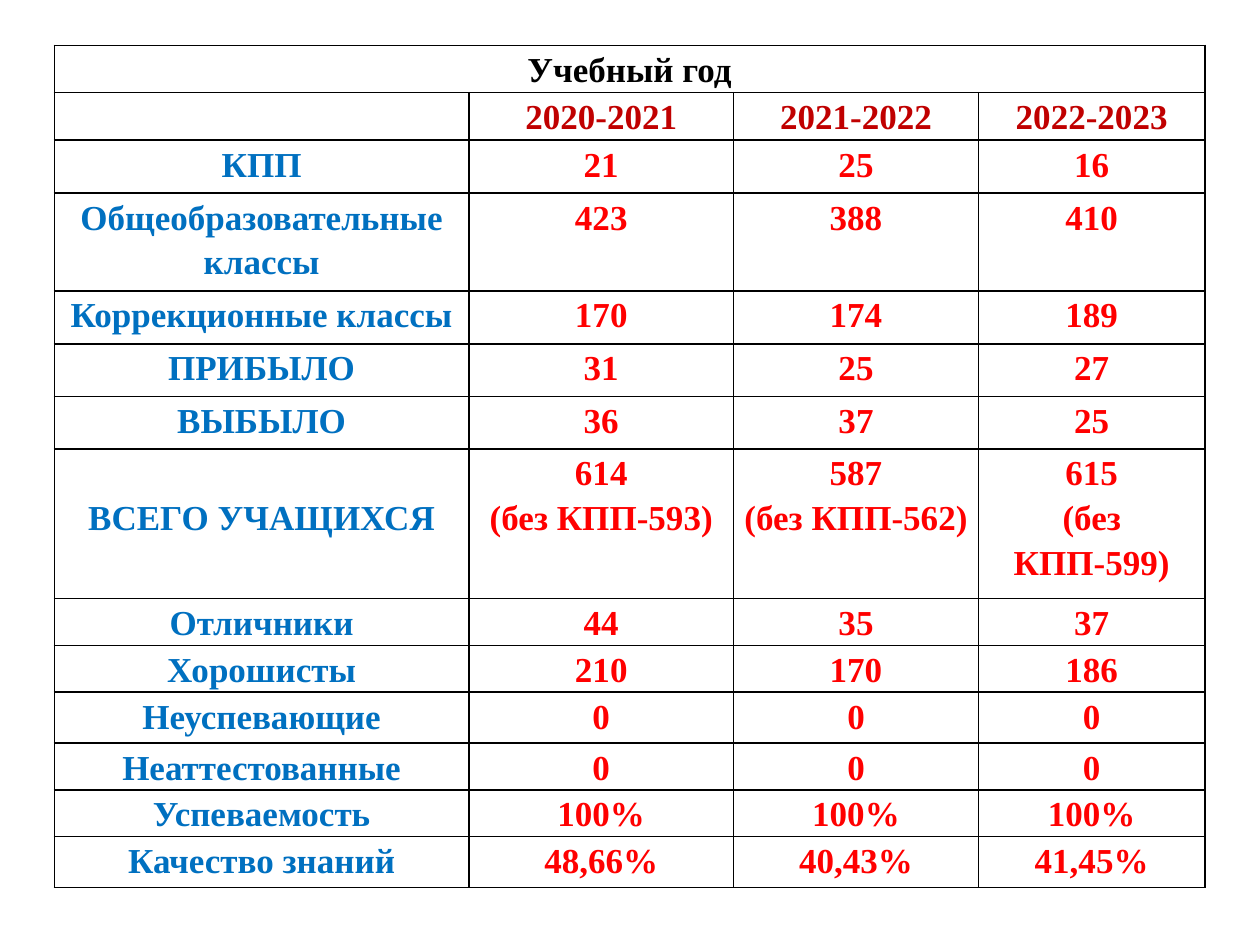
from lxml import etree
from pptx import Presentation
from pptx.dml.color import RGBColor
from pptx.enum.text import MSO_ANCHOR, PP_ALIGN
from pptx.oxml.ns import qn
from pptx.util import Pt

CENTER = PP_ALIGN.CENTER
TOP = MSO_ANCHOR.TOP

FONT = "Times New Roman"
BLACK, DARK_RED, BLUE, RED = "000000", "C00000", "0070C0", "FF0000"
COLUMN_WIDTHS = [237, 151.2, 140, 129.4]
HEADING = "Учебный год"
TOTAL_LABEL = "ВСЕГО УЧАЩИХСЯ"
TOTAL_LABEL_TOP = 25.5
YEARS = ["", "2020-2021", "2021-2022", "2022-2023"]
HEADER_HEIGHTS = [27, 27]
INDICATORS = [
    (30.3, ["КПП", "21", "25", "16"]),
    (56, ["Общеобразовательные классы", "423", "388", "410"]),
    (30.3, ["Коррекционные классы", "170", "174", "189"]),
    (30, ["ПРИБЫЛО", "31", "25", "27"]),
    (30, ["ВЫБЫЛО", "36", "37", "25"]),
    (85.5, [TOTAL_LABEL, "614\n(без КПП-593)", "587\n(без КПП-562)", "615\n(без КПП-599)"]),
    (26.8, ["Отличники", "44", "35", "37"]),
    (26.8, ["Хорошисты", "210", "170", "186"]),
    (29, ["Неуспевающие", "0", "0", "0"]),
    (26.8, ["Неаттестованные", "0", "0", "0"]),
    (26.8, ["Успеваемость", "100%", "100%", "100%"]),
    (29, ["Качество знаний", "48,66%", "40,43%", "41,45%"]),
]


def color(value):
    """Turn a hex string into a colour."""
    return RGBColor.from_string(value)


def add_borders(cell):
    """Draw a thin black line on every side of a cell."""
    properties = cell._tc.get_or_add_tcPr()
    for position, side in enumerate(("a:lnL", "a:lnR", "a:lnT", "a:lnB")):
        line = etree.Element(qn(side), w=str(Pt(1)))
        fill = etree.SubElement(line, qn("a:solidFill"))
        etree.SubElement(fill, qn("a:srgbClr"), val=BLACK)
        properties.insert(position, line)


def format_cell(cell):
    """Give a cell its borders, margins and empty fill."""
    cell.fill.background()
    cell.margin_left = cell.margin_right = Pt(5)
    cell.margin_top = cell.margin_bottom = Pt(0)
    cell.vertical_anchor = TOP
    add_borders(cell)


def write_cell(cell, text, text_color):
    """Write centred bold text, one paragraph per line."""
    frame = cell.text_frame
    for number, words in enumerate(text.split("\n")):
        para = frame.add_paragraph() if number else frame.paragraphs[0]
        para.alignment = CENTER
        para.line_spacing = 1.15
        span = para.add_run()
        span.text = words
        span.font.name = FONT
        span.font.size = Pt(20)
        span.font.bold = True
        span.font.color.rgb = color(text_color)


def write_row(table, row, texts, label_color, value_color):
    """Write a label and its values across one row."""
    for column, text in enumerate(texts):
        if text:
            write_cell(table.cell(row, column), text, value_color if column else label_color)


def add_grid(page, heights):
    """Add a plain bordered table sized by its row heights."""
    box = page.shapes.add_table(
        len(heights), len(COLUMN_WIDTHS), Pt(31), Pt(26), Pt(sum(COLUMN_WIDTHS)), Pt(sum(heights))
    )
    table = box.table
    table.first_row = table.horz_banding = False
    for column, width in zip(table.columns, COLUMN_WIDTHS):
        column.width = Pt(width)
    for row, height in zip(table.rows, heights):
        row.height = Pt(height)
    for cell in table.iter_cells():
        format_cell(cell)
    return table


def main():
    """Build the slide with school results by year."""
    deck = Presentation()
    deck.slide_width, deck.slide_height = Pt(720), Pt(540)
    page = deck.slides.add_slide(deck.slide_layouts[6])
    table = add_grid(page, HEADER_HEIGHTS + [height for height, _ in INDICATORS])
    table.cell(0, 0).merge(table.cell(0, len(COLUMN_WIDTHS) - 1))
    write_cell(table.cell(0, 0), HEADING, BLACK)
    write_row(table, 1, YEARS, DARK_RED, DARK_RED)
    for row, (_, texts) in enumerate(INDICATORS, start=len(HEADER_HEIGHTS)):
        write_row(table, row, texts, BLUE, RED)
        if texts[0] == TOTAL_LABEL:
            table.cell(row, 0).margin_top = Pt(TOTAL_LABEL_TOP)
    deck.save("out.pptx")


if __name__ == "__main__":
    main()
